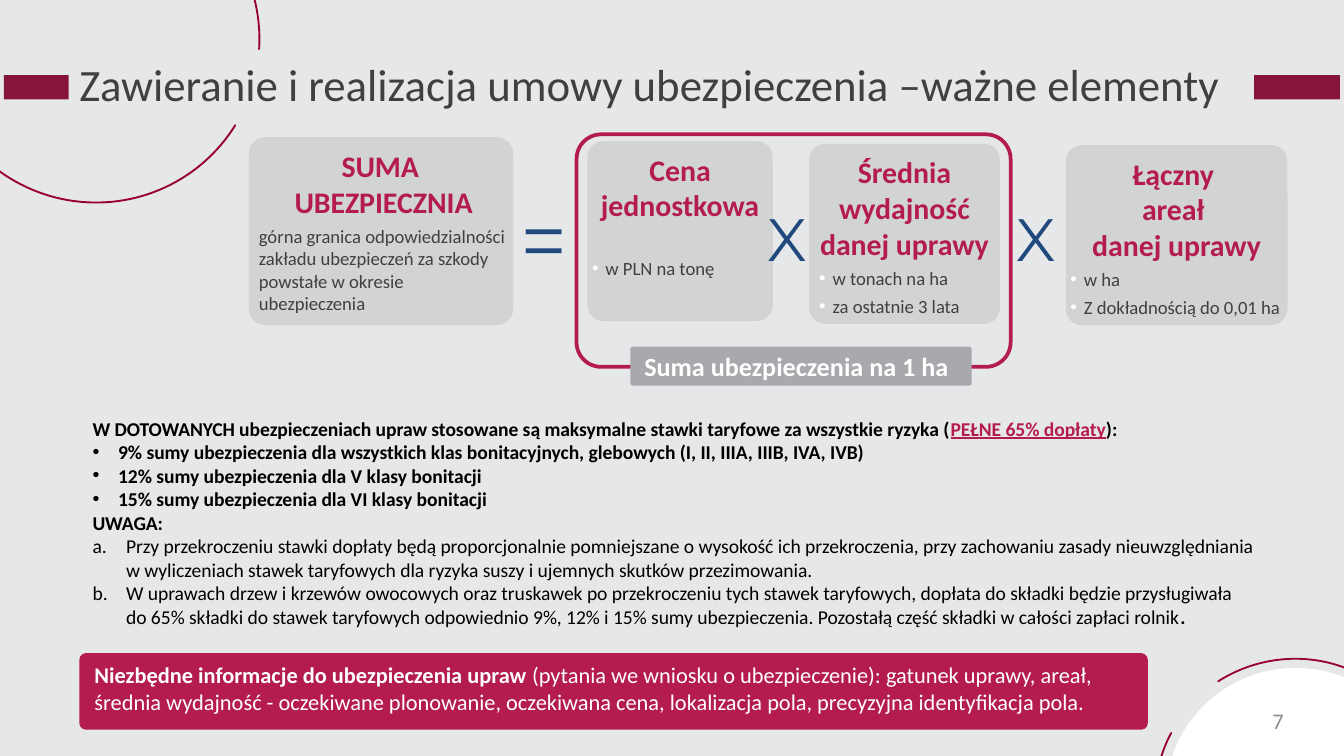
"""Build a slide on concluding and carrying out a crop insurance contract."""
import copy

import pptx
import pptx.dml.color
import pptx.enum.shapes
import pptx.enum.text
import pptx.oxml
import pptx.oxml.ns
import pptx.util

Inches = pptx.util.Inches
Pt = pptx.util.Pt
SHAPES = pptx.enum.shapes.MSO_SHAPE
ALIGN = pptx.enum.text.PP_ALIGN
ANCHOR = pptx.enum.text.MSO_ANCHOR

THEME = {
    "colors": {
        "background": "E6E7E9", "bar": "86153A", "arc": "990033", "accent": "B41C4F",
        "card": "D2D3D5", "label": "A8A9AD", "white": "FFFFFF",
    },
    "text": {
        "title": ("Calibri", 24, "404040", False),
        "heading": ("Calibri", 16, "B41C4F", True),
        "detail": ("Calibri", 10, "404040", False),
        "label": ("Calibri", 14, "FFFFFF", True),
        "banner": ("Calibri", 12, "FFFFFF", False),
        "banner bold": ("Calibri", 12, "FFFFFF", True),
        "rule": ("Calibri", 10.5, "000000", False),
        "rule bold": ("Calibri", 10.5, "000000", True),
        "rule link": ("Calibri", 10.5, "B41C4F", True),
        "equals": ("Montserrat", 44, "1F497D", False),
        "times": ("Montserrat", 32, "1F497D", False),
        "number": ("Calibri", 12, "8C8C8C", False),
    },
    "paragraph": {
        "plain": {},
        "right": {"align": ALIGN.RIGHT},
        "spaced": {"before": 3},
        "centered": {"align": ALIGN.CENTER, "before": 3},
        "point": {"before": 3, "indent": 0.1, "marker": "bullet", "color": "FFFFFF"},
        "low point": {"before": 18, "indent": 0.1, "marker": "bullet", "color": "FFFFFF"},
        "rate": {"indent": 0.19, "marker": "bullet"},
        "letter": {"indent": 0.25, "marker": "letter"},
    },
}

TITLE = "Zawieranie i realizacja umowy ubezpieczenia –ważne elementy"
ARCS = [
    ((-0.51, -0.93, 2.44, 2.45), 12.3, 170.455),
    ((-0.51, -0.94, 2.44, 2.45), 132.3, 155.787),
    ((8.59, 4.92, 2.11, 2.06), 205.2, 170.455),
    ((8.56, 4.91, 2.11, 2.06), 325.2, 163.482),
]
CARDS = [
    ((1.85, 1.02, 1.97, 1.4), (0.04, 0), "SUMA \nUBEZPIECZNIA", [
        ("spaced", "górna granica odpowiedzialności zakładu ubezpieczeń za szkody "
                   "powstałe w okresie ubezpieczenia")]),
    ((4.37, 1.05, 1.38, 1.34), (0, 0), "Cena jednostkowa", [("low point", "w PLN na tonę")]),
    ((6.02, 1.07, 1.42, 1.34), (0.04, 0.04), "Średnia wydajność danej uprawy", [
        ("point", "w tonach na ha"), ("point", "za ostatnie 3 lata")]),
    ((7.93, 1.08, 1.65, 1.34), (0, 0), "Łączny \nareał \ndanej uprawy", [
        ("point", "w ha"), ("point", "Z dokładnością do 0,01 ha")]),
]
OPERATORS = [
    ((3.87, 1.4, 0.39, 0.74), "=", "equals"),
    ((5.71, 1.5, 0.39, 0.54), "X", "times"),
    ((7.56, 1.5, 0.39, 0.54), "X", "times"),
]
BANNER = [("spaced", [
    ("Niezbędne informacje do ubezpieczenia upraw", "banner bold"),
    (" (pytania we wniosku o ubezpieczenie): gatunek uprawy, areał, średnia wydajność - "
     "oczekiwane plonowanie, oczekiwana cena, lokalizacja pola, precyzyjna identyfikacja pola.",
     "banner")])]
RULES = [
    ("plain", [
        ("W DOTOWANYCH ubezpieczeniach upraw stosowane są maksymalne stawki taryfowe "
         "za wszystkie ryzyka (", "rule bold"),
        ("PEŁNE 65% dopłaty", "rule link"), ("):", "rule bold")]),
    ("rate", [("9% sumy ubezpieczenia dla wszystkich klas bonitacyjnych, glebowych "
               "(I, II, IIIA, IIIB, IVA, IVB)", "rule bold")]),
    ("rate", [("12% sumy ubezpieczenia dla V klasy bonitacji", "rule bold")]),
    ("rate", [("15% sumy ubezpieczenia dla VI klasy bonitacji", "rule bold")]),
    ("plain", [("UWAGA:", "rule bold")]),
    ("letter", [
        ("Przy przekroczeniu stawki dopłaty będą proporcjonalnie pomniejszane o wysokość ich "
         "przekroczenia, przy zachowaniu zasady nieuwzględniania w wyliczeniach stawek "
         "taryfowych dla ryzyka suszy i ujemnych skutków przezimowania.", "rule")]),
    ("letter", [
        ("W uprawach drzew i krzewów owocowych oraz truskawek po przekroczeniu tych stawek "
         "taryfowych, dopłata do składki będzie przysługiwała \ndo 65% składki do stawek "
         "taryfowych odpowiednio 9%, 12% i 15% sumy ubezpieczenia. Pozostałą część składki "
         "w całości zapłaci rolnik", "rule"), (".", "rule bold")]),
]


def rgb(value):
    return pptx.dml.color.RGBColor.from_string(value)


def box(position):
    return [Inches(length) for length in position]


def add_xml(parent, tag, **attributes):
    element = pptx.oxml.parse_xml(f"<a:{tag} {pptx.oxml.ns.nsdecls('a')}/>")
    for name, value in attributes.items():
        element.set(name, value)
    parent.append(element)
    return element


def format_run(run, style):
    run.font.name, size, color, run.font.bold = THEME["text"][style]
    run.font.size = Pt(size)
    run.font.color.rgb = rgb(color)
    run.font.underline = style == "rule link"


def format_paragraph(paragraph, align=ALIGN.LEFT, before=0, indent=0, marker=None, color=None):
    paragraph.alignment = align
    paragraph.space_before = Pt(before)
    if marker:
        properties = paragraph._p.get_or_add_pPr()
        properties.set("marL", str(Inches(indent)))
        properties.set("indent", str(-Inches(indent)))
        if color:
            add_xml(add_xml(properties, "buClr"), "srgbClr", val=color)
        if marker == "bullet":
            add_xml(properties, "buFont", typeface="Arial")
            add_xml(properties, "buChar", char="•")
        else:
            add_xml(properties, "buAutoNum", type="alphaLcPeriod")


def write(shape, paragraphs, insets=(0.1, 0.05, 0.1, 0.05), anchor=ANCHOR.TOP, wrap=True):
    frame = shape.text_frame
    frame.word_wrap = wrap
    frame.vertical_anchor = anchor
    frame.margin_left, frame.margin_top, frame.margin_right, frame.margin_bottom = box(insets)
    for index, (kind, runs) in enumerate(paragraphs):
        paragraph = frame.add_paragraph() if index else frame.paragraphs[0]
        format_paragraph(paragraph, **THEME["paragraph"][kind])
        for text, style in runs:
            for line_index, line in enumerate(text.split("\n")):
                if line_index:
                    paragraph.add_line_break()
                    line_break = paragraph._p[-1]
                    line_break.append(copy.deepcopy(run._r.rPr))
                run = paragraph.add_run()
                run.text = line
                format_run(run, style)


def add_shape(slide, kind, position, fill=None, line=None, width=1, adjustments=()):
    shape = slide.shapes.add_shape(kind, *box(position))
    shape.shadow.inherit = False
    for index, value in enumerate(adjustments):
        shape.adjustments[index] = value
    if fill:
        shape.fill.solid()
        shape.fill.fore_color.rgb = rgb(THEME["colors"][fill])
    else:
        shape.fill.background()
    if line:
        shape.line.color.rgb = rgb(THEME["colors"][line])
        shape.line.width = Pt(width)
    else:
        shape.line.fill.background()
    return shape


def add_title(slide):
    title = slide.shapes.title
    title.left, title.top, title.width, title.height = box((0.51, 0.37, 8.82, 0.38))
    title.fill.solid()
    title.fill.fore_color.rgb = rgb(THEME["colors"]["background"])
    write(title, [("plain", [(TITLE, "title")])], (0.08, 0.05, 0.08, 0))
    title.text_frame.auto_size = pptx.enum.text.MSO_AUTO_SIZE.NONE
    slide.shapes._spTree.append(title._element)


def main():
    presentation = pptx.Presentation()
    presentation.slide_width = Inches(10)
    presentation.slide_height = Inches(10) * 9 // 16
    slide = presentation.slides.add_slide(presentation.slide_layouts[5])
    slide.background.fill.solid()
    slide.background.fill.fore_color.rgb = rgb(THEME["colors"]["background"])

    for position, rotation, start in ARCS:
        arc = add_shape(slide, SHAPES.BLOCK_ARC, position, "bar", "arc", 1, (start, 1.759, 0))
        arc.rotation = rotation
    add_shape(slide, SHAPES.OVAL, (8.67, 4.97, 1.94, 1.94), "white")
    add_shape(slide, SHAPES.RECTANGLE, (0.03, 0.56, 9.94, 0.18), "bar")
    add_title(slide)

    rounded = SHAPES.ROUNDED_RECTANGLE
    for position, (left, right), heading, details in CARDS:
        card = add_shape(slide, rounded, position, "card", adjustments=[0.09])
        paragraphs = [("centered", [(heading, "heading")])]
        paragraphs += [(kind, [(text, "detail")]) for kind, text in details]
        write(card, paragraphs, (left, 0.04, right, 0.04))
    add_shape(slide, rounded, (4.29, 1, 3.23, 1.73), None, "accent", 2, [0.106])
    for position, symbol, style in OPERATORS:
        operator = slide.shapes.add_textbox(*box(position))
        write(operator, [("plain", [(symbol, style)])], (0, 0, 0, 0), wrap=False)

    label = add_shape(slide, rounded, (4.69, 2.58, 2.54, 0.29), "label", adjustments=[0.068])
    write(label, [("spaced", [("Suma ubezpieczenia na 1 ha", "label")])], anchor=ANCHOR.MIDDLE)
    write(slide.shapes.add_textbox(*box((0.59, 3.05, 8.95, 1.69))), RULES)
    banner = add_shape(slide, rounded, (0.59, 4.86, 7.95, 0.57), "accent", adjustments=[0.087])
    write(banner, BANNER)
    number = slide.shapes.add_textbox(*box((8.27, 5.21, 1.38, 0.3)))
    write(number, [("right", [("7", "number")])], anchor=ANCHOR.MIDDLE)
    presentation.save("out.pptx")


if __name__ == "__main__":
    main()
